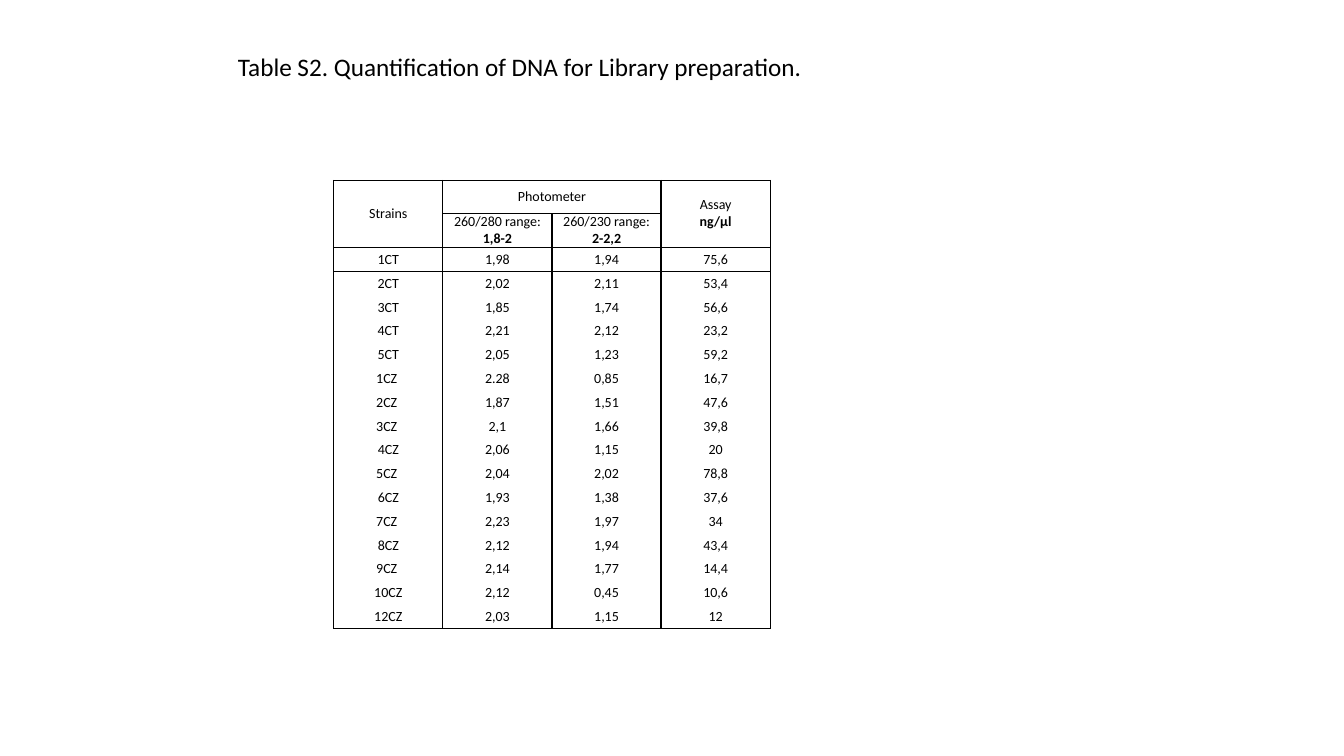
from lxml.etree import SubElement
from pptx import Presentation
from pptx.dml.color import RGBColor
from pptx.enum.text import MSO_ANCHOR, PP_ALIGN
from pptx.oxml.ns import qn
from pptx.util import Inches, Pt

COLORS = {"text": "000000", "line": "000000"}
FONT = "Calibri"
NO_GRID_STYLE = "{2D5ABB26-0587-4C30-8999-92F81FD0307C}"
HEADER_ROWS, HEADER_HEIGHT = 2, 0.33

# (row, column): lines of (text, bold), vertical anchor
HEADER = {
    (0, 0): ([("Strains", False)], MSO_ANCHOR.MIDDLE),
    (0, 1): ([("Photometer", False)], MSO_ANCHOR.MIDDLE),
    (0, 3): ([("Assay", False)], MSO_ANCHOR.BOTTOM),
    (1, 1): ([("260/280 range:", False), ("1,8-2", True)], MSO_ANCHOR.MIDDLE),
    (1, 2): ([("260/230 range:", False), ("2-2,2", True)], MSO_ANCHOR.MIDDLE),
    (1, 3): ([("ng/µl", True)], MSO_ANCHOR.TOP),
}
SAMPLES = [
    ("1CT", "1,98", "1,94", "75,6"),
    ("2CT", "2,02", "2,11", "53,4"),
    ("3CT", "1,85", "1,74", "56,6"),
    ("4CT", "2,21", "2,12", "23,2"),
    ("5CT", "2,05", "1,23", "59,2"),
    ("1CZ ", "2.28", "0,85", "16,7"),
    ("2CZ ", "1,87", "1,51", "47,6"),
    ("3CZ ", "2,1", "1,66", "39,8"),
    ("4CZ", "2,06", "1,15", "20"),
    ("5CZ ", "2,04", "2,02", "78,8"),
    ("6CZ", "1,93", "1,38", "37,6"),
    ("7CZ ", "2,23", "1,97", "34"),
    ("8CZ", "2,12", "1,94", "43,4"),
    ("9CZ ", "2,14", "1,77", "14,4"),
    ("10CZ", "2,12", "0,45", "10,6"),
    ("12CZ", "2,03", "1,15", "12"),
]


def write(p, text, size, bold=False):
    r = p.add_run()
    r.text = text
    for name, value in {"name": FONT, "size": Pt(size), "bold": bold}.items():
        setattr(r.font, name, value)
    r.font.color.rgb = RGBColor.from_string(COLORS["text"])


def add_title(s, x, y, w, h):
    title = s.shapes.title
    for name, value in zip(("left", "top", "width", "height"), (x, y, w, h)):
        setattr(title, name, Inches(value))
    tf = title.text_frame
    tf.word_wrap = False
    tf.vertical_anchor = MSO_ANCHOR.MIDDLE
    p = tf.paragraphs[0]
    p.alignment = PP_ALIGN.LEFT
    write(p, "Table S2. Quantification of DNA for Library preparation.", 18)


def edges(row, col, last_row):
    """Return the sides of a cell that carry a line."""
    header, ratio = row < HEADER_ROWS, col in (1, 2)
    lines = {
        "L": header or col != 2,
        "R": header or col != 1,
        "T": row in (0, HEADER_ROWS) or (row == 1 and ratio),
        "B": row in (1, last_row) or (row == 0 and ratio),
    }
    return [side for side, drawn in lines.items() if drawn]


def fill_cell(cell, lines, anchor, sides):
    tcPr = cell._tc.get_or_add_tcPr()
    for side in sides:
        ln = SubElement(tcPr, qn(f"a:ln{side}"), w=str(Pt(1)))
        solid = SubElement(ln, qn("a:solidFill"))
        SubElement(solid, qn("a:srgbClr"), val=COLORS["line"])
    cell.fill.background()
    cell.vertical_anchor = anchor
    cell.margin_left = cell.margin_right = Inches(0.05)
    cell.margin_top = cell.margin_bottom = 0
    tf = cell.text_frame
    for i, (text, bold) in enumerate(lines):
        p = tf.add_paragraph() if i else tf.paragraphs[0]
        p.alignment = PP_ALIGN.CENTER
        write(p, text, 10, bold)


def add_dna_table(s, x, y, w, h):
    n_rows, n_cols = HEADER_ROWS + len(SAMPLES), len(SAMPLES[0])
    frame = s.shapes.add_table(n_rows, n_cols, *map(Inches, (x, y, w, h)))
    table = frame.table
    table.first_row = table.horz_banding = False
    table._tbl.tblPr.find(qn("a:tableStyleId")).text = NO_GRID_STYLE
    for column in table.columns:
        column.width = Inches(w / n_cols)
    body_height = (h - HEADER_ROWS * HEADER_HEIGHT) / len(SAMPLES)
    for i, row in enumerate(table.rows):
        row.height = Inches(HEADER_HEIGHT if i < HEADER_ROWS else body_height)

    cells = dict(HEADER)
    for i, sample in enumerate(SAMPLES, HEADER_ROWS):
        for j, value in enumerate(sample):
            cells[i, j] = [(value, False)], MSO_ANCHOR.MIDDLE
    for i in range(n_rows):
        for j in range(n_cols):
            lines, anchor = cells.get((i, j), ([], MSO_ANCHOR.MIDDLE))
            fill_cell(table.cell(i, j), lines, anchor, edges(i, j, n_rows - 1))
    table.cell(0, 0).merge(table.cell(1, 0))
    table.cell(0, 1).merge(table.cell(0, 2))


def main():
    prs = Presentation()
    prs.slide_width, prs.slide_height = Inches(13.33), Inches(7.5)
    s = prs.slides.add_slide(prs.slide_layouts[5])
    add_title(s, 2.26, 0.46, 5.92, 0.4)
    add_dna_table(s, 3.31, 1.79, 4.33, 4.44)
    prs.save("out.pptx")


if __name__ == "__main__":
    main()
